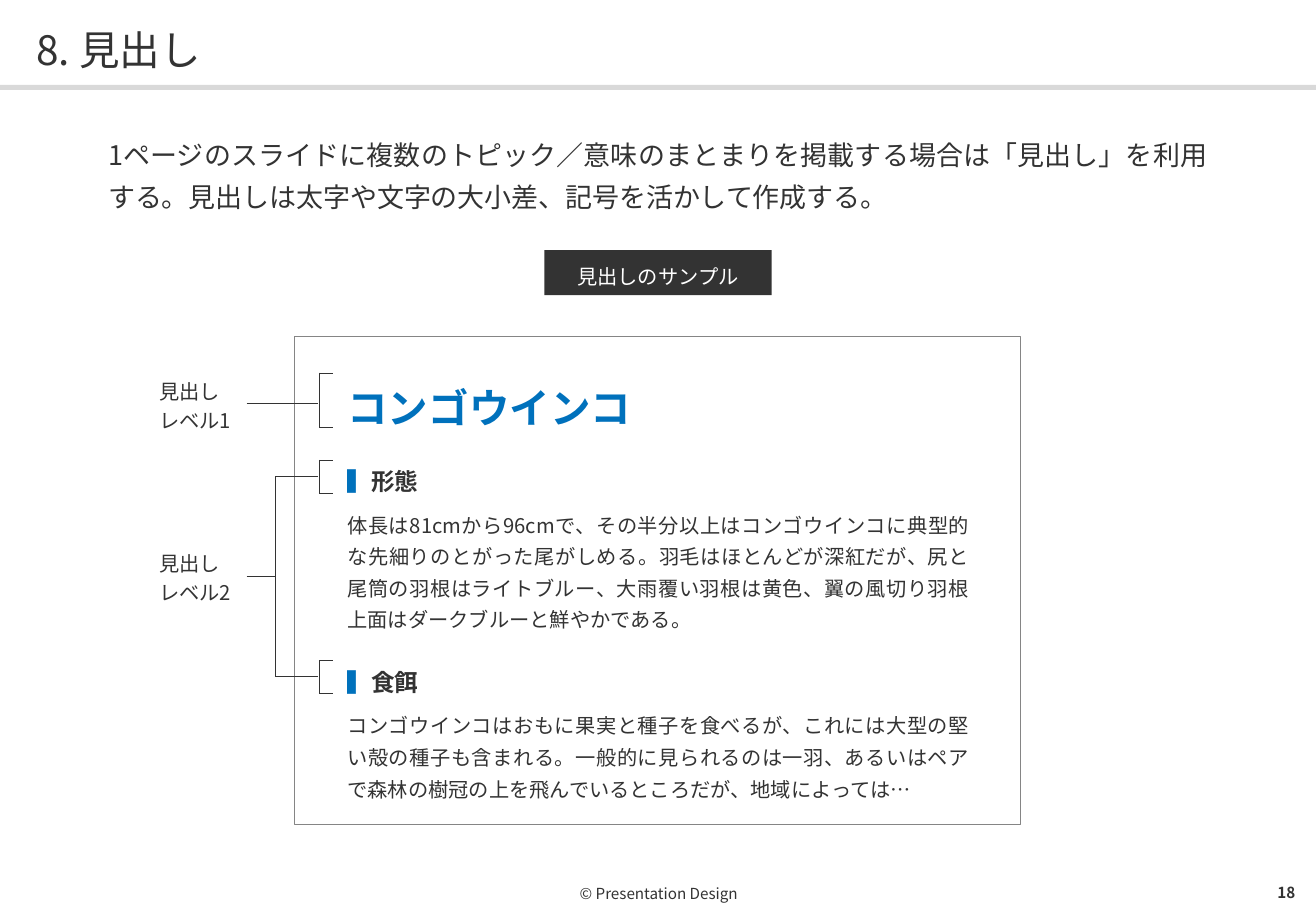
from dataclasses import dataclass

from lxml import etree
from pptx import Presentation
from pptx.dml.color import RGBColor
from pptx.enum import lang, shapes, text
from pptx.oxml import ns
from pptx.util import Inches, Pt


@dataclass(frozen=True)
class Theme:
    font: str = "Noto Sans CJK JP"
    ink: str = "333333"
    blue: str = "0071BC"
    white: str = "FFFFFF"
    rule: str = "D9D9D9"
    frame: str = "858585"
    title: int = 24
    lead: int = 16
    subheading: int = 14
    body: int = 12
    footer: int = 9
    hairline: float = 0.5


THEME = Theme()
ALIGN = text.PP_ALIGN
MIDDLE = text.MSO_ANCHOR.MIDDLE

TITLE = "8. 見出し"
LEAD = ("1ページのスライドに複数のトピック／意味のまとまりを掲載する場合は「見出し」を利用する。"
        "見出しは太字や文字の大小差、記号を活かして作成する。")
BADGE = "見出しのサンプル"
SAMPLE_TITLE = "コンゴウインコ"
SAMPLE_SECTIONS = [
    ("形態",
     "体長は81cmから96cmで、その半分以上はコンゴウインコに典型的な先細りのとがった尾がしめる。"
     "羽毛はほとんどが深紅だが、尻と尾筒の羽根はライトブルー、大雨覆い羽根は黄色、"
     "翼の風切り羽根上面はダークブルーと鮮やかである。"),
    ("食餌",
     "コンゴウインコはおもに果実と種子を食べるが、これには大型の堅い殻の種子も含まれる。"
     "一般的に見られるのは一羽、あるいはペアで森林の樹冠の上を飛んでいるところだが、地域によっては…"),
]
LEVEL_LABELS = [(("見出し", "レベル1"), 3.08), (("見出し", "レベル2"), 4.5)]
BRACKETS = [(3.07, 0.45), (3.79, 0.27), (5.44, 0.27)]
FOOTER = "© Presentation Design"
PAGE_NUMBER = "18"

MARGIN, CONTENT_WIDTH = 0.89, 9.06
LABEL_LEFT, LABEL_WIDTH, LABEL_HEIGHT = 1.31, 0.64, 0.47
LEADER_LEFT, TRUNK, BRACKET_LEFT, BRACKET_WIDTH = 2.03, 2.27, 2.63, 0.11
LEADER_RIGHT = BRACKET_LEFT - 0.01
LEVEL_1_Y, LEVEL_2_YS = 3.32, (3.92, 5.57)


def rgb(color):
    return RGBColor.from_string(color)


def add_run(paragraph, words, size, color=THEME.ink, bold=False):
    run = paragraph.add_run()
    run.text = words
    font = run.font
    font.name, font.size, font.bold = THEME.font, Pt(size), bold
    font.color.rgb = rgb(color)
    font.language_id = lang.MSO_LANGUAGE_ID.JAPANESE
    east_asian = etree.Element(ns.qn("a:ea"), typeface=THEME.font)
    run._r.rPr.find(ns.qn("a:latin")).addnext(east_asian)


def add_paragraphs(frame, paragraphs, anchor=text.MSO_ANCHOR.TOP, margins=(0, 0, 0, 0)):
    """Fill a frame from (runs, alignment, line spacing, space before, space after)."""
    frame.word_wrap = True
    frame.vertical_anchor = anchor
    (frame.margin_left, frame.margin_top,
     frame.margin_right, frame.margin_bottom) = map(Inches, margins)
    for index, (runs, align, spacing, before, after) in enumerate(paragraphs):
        paragraph = frame.add_paragraph() if index else frame.paragraphs[0]
        paragraph.alignment, paragraph.line_spacing = align, spacing
        paragraph.space_before, paragraph.space_after = Pt(before), Pt(after)
        for run in runs:
            add_run(paragraph, *run)


def add_text(slide, box, paragraphs, anchor=text.MSO_ANCHOR.TOP):
    shape = slide.shapes.add_textbox(*map(Inches, box))
    add_paragraphs(shape.text_frame, paragraphs, anchor)


def add_rectangle(slide, box, fill, line=None):
    shape = slide.shapes.add_shape(shapes.MSO_SHAPE.RECTANGLE, *map(Inches, box))
    shape.shadow.inherit = False
    shape.fill.solid()
    shape.fill.fore_color.rgb = rgb(fill)
    if line:
        shape.line.color.rgb = rgb(line)
        shape.line.width = Pt(THEME.hairline)
    else:
        shape.line.fill.background()
    return shape


def add_line(slide, *ends):
    connector = slide.shapes.add_connector(
        shapes.MSO_CONNECTOR.STRAIGHT, *map(Inches, ends))
    connector.line.color.rgb = rgb(THEME.ink)
    connector.line.width = Pt(THEME.hairline)
    etree.SubElement(connector._element.spPr, ns.qn("a:effectLst"))


def add_bracket(slide, top, height):
    """Draw a bracket as a one-cell table without a right border."""
    box = (BRACKET_LEFT, top, BRACKET_WIDTH, height)
    table = slide.shapes.add_table(1, 1, *map(Inches, box)).table
    table.first_row = table.horz_banding = False
    cell = table.cell(0, 0)
    cell.margin_left = cell.margin_right = cell.margin_top = cell.margin_bottom = 0
    etree.SubElement(cell.text_frame.paragraphs[0]._p, ns.qn("a:endParaRPr"), sz="600")
    properties = cell._tc.get_or_add_tcPr()
    for side in ("lnL", "lnR", "lnT", "lnB"):
        border = etree.SubElement(properties, ns.qn(f"a:{side}"), w=str(Pt(THEME.hairline)))
        if side == "lnR":
            etree.SubElement(border, ns.qn("a:noFill"))
        else:
            fill = etree.SubElement(border, ns.qn("a:solidFill"))
            etree.SubElement(fill, ns.qn("a:srgbClr"), val=THEME.ink)
    cell.fill.background()


def sample_paragraphs():
    heading = (ALIGN.JUSTIFY, 1.2, 12, 6)
    paragraphs = [([(SAMPLE_TITLE, THEME.title, THEME.blue, True)], *heading)]
    for name, body in SAMPLE_SECTIONS:
        runs = [("▍", THEME.subheading, THEME.blue, True),
                (name, THEME.subheading, THEME.ink, True)]
        paragraphs += [(runs, *heading),
                       ([(body, THEME.body)], ALIGN.JUSTIFY, 1.3, 0, 6)]
    return paragraphs


def add_sample(slide):
    badge = add_rectangle(slide, (4.48, 2.06, 1.87, 0.37), THEME.ink)
    add_paragraphs(badge.text_frame,
                   [([(BADGE, THEME.body, THEME.white)], ALIGN.CENTER, 1.2, 0, 0)],
                   MIDDLE, (0.12, 0.08, 0.12, 0.06))
    add_rectangle(slide, (2.42, 2.77, 5.98, 4.02), THEME.white, THEME.frame)
    add_text(slide, (2.86, 3.07, 5.12, 3.55), sample_paragraphs())


def add_level_marks(slide):
    for lines, top in LEVEL_LABELS:
        add_text(slide, (LABEL_LEFT, top, LABEL_WIDTH, LABEL_HEIGHT),
                 [([(line, THEME.body)], ALIGN.JUSTIFY, 1.2, 0, 0) for line in lines])
    for top, height in BRACKETS:
        add_bracket(slide, top, height)
    add_line(slide, LEADER_LEFT, LEVEL_1_Y, LEADER_RIGHT, LEVEL_1_Y)
    for y in LEVEL_2_YS:
        add_line(slide, TRUNK, y, LEADER_RIGHT, y)
    add_line(slide, TRUNK, LEVEL_2_YS[0], TRUNK, LEVEL_2_YS[1])
    middle = sum(LEVEL_2_YS) / 2
    add_line(slide, LEADER_LEFT, middle, TRUNK, middle)


def main():
    presentation = Presentation()
    presentation.slide_width, presentation.slide_height = Inches(10.83), Inches(7.5)
    slide = presentation.slides.add_slide(presentation.slide_layouts[6])
    add_rectangle(slide, (0, 0.7, 10.83, 0.04), THEME.rule)
    add_text(slide, (0.3, 0.17, 10.24, 0.43),
             [([(TITLE, THEME.title)], ALIGN.LEFT, 1.1, 0, 0)], MIDDLE)
    add_text(slide, (MARGIN, 1.06, CONTENT_WIDTH, 0.68),
             [([(LEAD, THEME.lead)], ALIGN.JUSTIFY, 1.3, 0, 0)])
    add_sample(slide)
    add_level_marks(slide)
    add_text(slide, (MARGIN, 7.21, CONTENT_WIDTH, 0.29),
             [([(FOOTER, THEME.footer)], ALIGN.CENTER, 1.0, 0, 0)], MIDDLE)
    add_text(slide, (10.14, 7.21, 0.52, 0.28),
             [([(PAGE_NUMBER, THEME.footer, THEME.ink, True)], ALIGN.RIGHT, 1.0, 0, 0)],
             MIDDLE)
    presentation.save("out.pptx")


if __name__ == "__main__":
    main()
